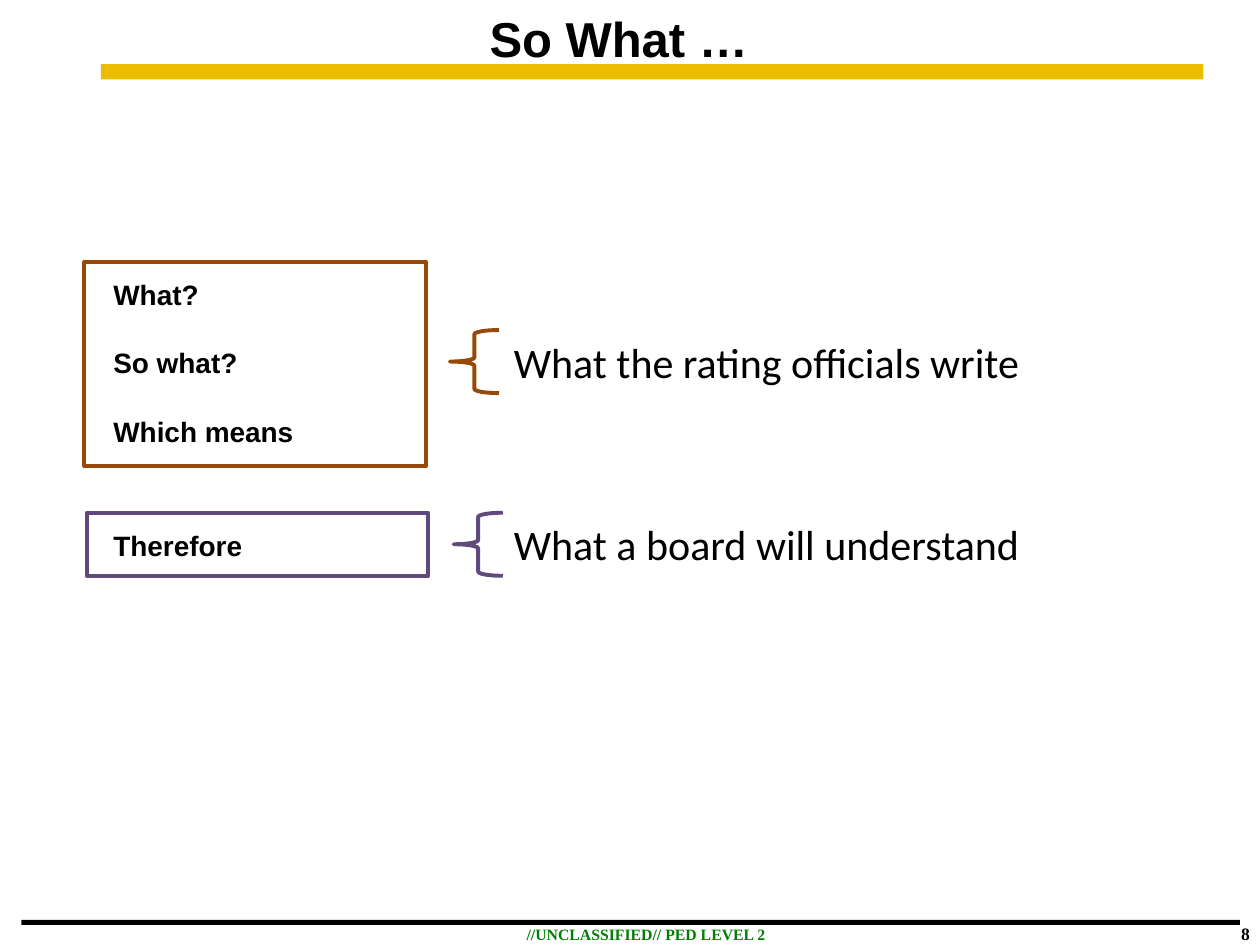
from pptx import Presentation
from pptx.dml.color import RGBColor
from pptx.enum.shapes import MSO_SHAPE as Shape
from pptx.enum.text import PP_ALIGN as Align
from pptx.util import Inches, Pt

COLORS = {"gold": "EABD00", "black": "000000", "green": "008000",
          "brown": "984807", "purple": "604A7B"}
COLS, ROWS = 100, 75
TEXT_INSETS = (0.1, 0.05, 0.1, 0.05)


def add_text(p, text, font="Arial", size=16, color="black", bold=False,
             align=Align.LEFT, before=0):
    p.alignment = align
    p.space_before = Pt(before)
    r = p.add_run()
    r.text = text
    r.font.name = font
    r.font.size = Pt(size)
    r.font.bold = bold
    r.font.color.rgb = RGBColor.from_string(COLORS[color])


class SlideBuilder:
    """Places elements on a grid of COLS by ROWS cells."""

    def __init__(self, prs):
        self.s = prs.slides.add_slide(prs.slide_layouts[6])
        self.cell_w = prs.slide_width / COLS
        self.cell_h = prs.slide_height / ROWS

    def place(self, col, row, cols, rows):
        return (round(col * self.cell_w), round(row * self.cell_h),
                round(cols * self.cell_w), round(rows * self.cell_h))

    def shape(self, kind, *cells):
        sp = self.s.shapes.add_shape(kind, *self.place(*cells))
        sp.shadow.inherit = False
        return sp

    def bar(self, color, *cells):
        sp = self.shape(Shape.RECTANGLE, *cells)
        sp.fill.solid()
        sp.fill.fore_color.rgb = RGBColor.from_string(COLORS[color])
        sp.line.fill.background()

    def outline(self, kind, color, *cells):
        sp = self.shape(kind, *cells)
        sp.fill.background()
        sp.line.color.rgb = RGBColor.from_string(COLORS[color])
        sp.line.width = Pt(2.25)

    def text(self, lines, *cells, insets=TEXT_INSETS, wrap=True, **style):
        """Adds a text box; lines holds (text, points of space before) pairs."""
        tf = self.s.shapes.add_textbox(*self.place(*cells)).text_frame
        tf.word_wrap = wrap
        (tf.margin_left, tf.margin_top,
         tf.margin_right, tf.margin_bottom) = map(Inches, insets)
        for i, (line, before) in enumerate(lines):
            p = tf.add_paragraph() if i else tf.paragraphs[0]
            add_text(p, line, before=before, **style)


def main():
    prs = Presentation()
    prs.slide_width, prs.slide_height = Inches(10), Inches(7.5)
    b = SlideBuilder(prs)

    b.bar("gold", 8, 5.1, 87.5, 1.2)
    b.bar("black", 1.7, 73, 96.7, 0.4)
    footer = {"font": "Times New Roman", "bold": True}
    b.text([("//UNCLASSIFIED// PED LEVEL 2", 0)], 40, 72.9, 22.5, 2.5,
           size=9, color="green", align=Align.CENTER, **footer)
    b.text([("8", 0)], 95, 72.8, 5, 2.2, insets=(0, 0.05, 0.08, 0),
           size=10, align=Align.RIGHT, **footer)

    b.text([("So What …", 0)], 6.7, 0.3, 84.8, 4.4, insets=(0, 0.04, 0, 0),
           size=28, bold=True, align=Align.CENTER)
    b.text([("What?", 0), ("So what?", 20), ("Which means", 20),
            ("Therefore", 46)],
           9, 22, 82.5, 44, insets=(0, 0, 0, 0), bold=True)

    groups = [
        ("What the rating officials write", "brown", 6.7, 20.8, 16.2, 26.2, 35.7),
        ("What a board will understand", "purple", 6.9, 40.7, 5, 40.7, 36),
    ]
    for label, color, left, top, rows, brace_top, brace_left in groups:
        b.outline(Shape.RECTANGLE, color, left, top, 27.1, rows)
        b.outline(Shape.LEFT_BRACE, color, brace_left, brace_top, 3.9, 5)
        b.text([(label, 0)], 39.8, brace_top, 42.6, 5, wrap=False,
               font="Calibri", size=24)

    prs.save("out.pptx")


if __name__ == "__main__":
    main()
